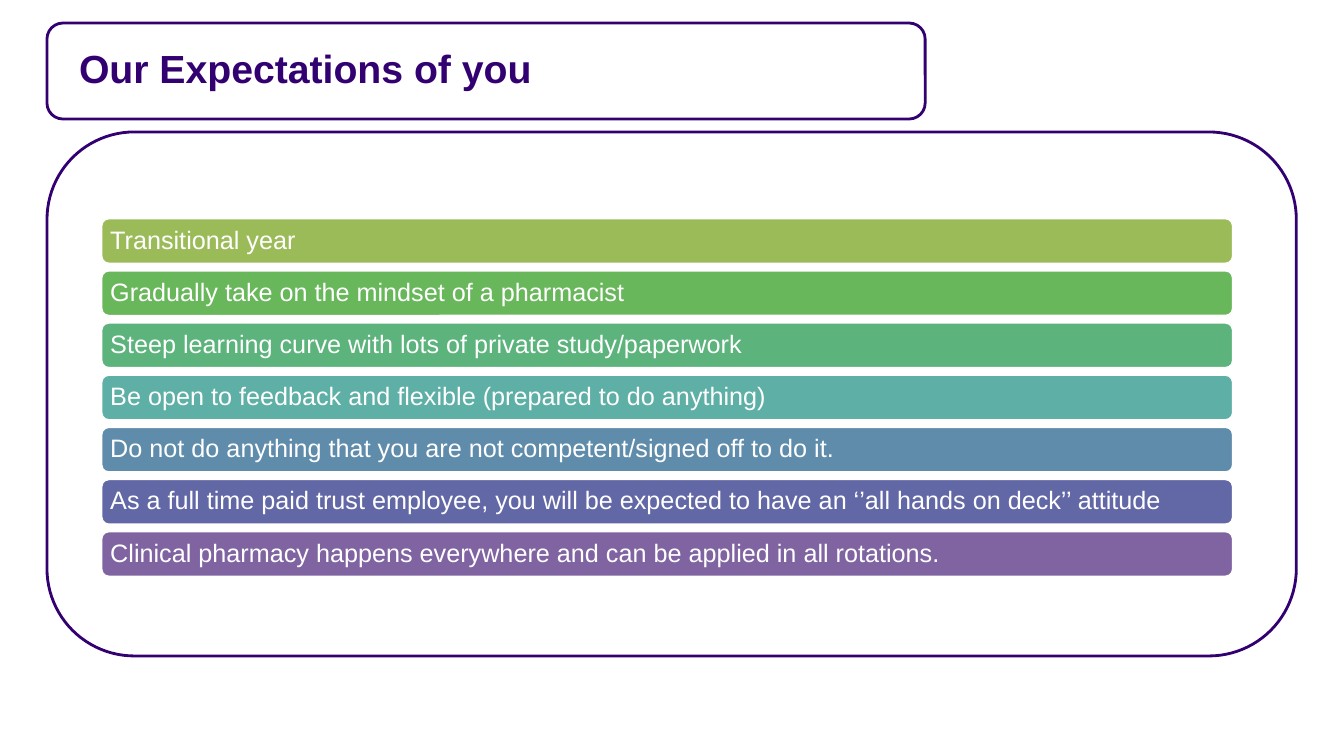
from lxml.etree import SubElement
from pptx import Presentation
from pptx.dml.color import RGBColor
from pptx.enum.shapes import MSO_SHAPE
from pptx.enum.text import MSO_ANCHOR, PP_ALIGN
from pptx.oxml.ns import qn
from pptx.util import Inches, Pt

# Content
PURPLE = RGBColor(0x33, 0x00, 0x72)
WHITE = RGBColor(0xFF, 0xFF, 0xFF)
TITLE = "Our Expectations of you"
EXPECTATIONS = [
    ("Transitional year", RGBColor(0x9B, 0xBB, 0x59)),
    ("Gradually take on the mindset of a pharmacist", RGBColor(0x69, 0xB7, 0x5B)),
    ("Steep learning curve with lots of private study/paperwork", RGBColor(0x5C, 0xB3, 0x7C)),
    ("Be open to feedback and flexible (prepared to do anything)", RGBColor(0x5E, 0xAF, 0xA6)),
    ("Do not do anything that you are not competent/signed off to do it.",
     RGBColor(0x60, 0x8C, 0xAB)),
    ("As a full time paid trust employee, you will be expected to have an "
     "‘’all hands on deck’’ attitude", RGBColor(0x62, 0x67, 0xA6)),
    ("Clinical pharmacy happens everywhere and can be applied in all rotations.",
     RGBColor(0x80, 0x64, 0xA2)),
]

# Layout in px: left, top, width, height
PX_PER_INCH = 100.8
PANEL = (47, 132, 1249, 524)
BANNER = (47, 23, 878, 96)
TITLE_BOX = (69, 38, 836, 60)
BAR_LIST = (101, 218, 1132, 359)
BAR_HEIGHT = 46

TITLE_FONT = {"name": "Arial", "size": Pt(28), "bold": True}
BAR_FONT = {"name": "Arial", "size": Pt(18), "bold": False}


def px(length):
    return Inches(length / PX_PER_INCH)


def add_round_box(slide, box, fill, line):
    shape = slide.shapes.add_shape(MSO_SHAPE.ROUNDED_RECTANGLE, *map(px, box))
    shape.shadow.inherit = False
    shape.fill.solid()
    shape.fill.fore_color.rgb = fill
    shape.line.color.rgb = line
    shape.line.width = Pt(2)
    return shape


def set_text(shape, text, font_values, color, inset_x, inset_y):
    frame = shape.text_frame
    frame_values = {
        "text": text, "word_wrap": True, "vertical_anchor": MSO_ANCHOR.MIDDLE,
        "margin_left": px(inset_x), "margin_right": px(inset_x),
        "margin_top": px(inset_y), "margin_bottom": px(inset_y),
    }
    for name, value in frame_values.items():
        setattr(frame, name, value)
    paragraph = frame.paragraphs[0]
    paragraph.alignment = PP_ALIGN.LEFT
    font = paragraph.runs[0].font
    for name, value in font_values.items():
        setattr(font, name, value)
    font.color.rgb = color
    return paragraph


def main():
    presentation = Presentation()
    presentation.slide_width = Inches(13.33)
    presentation.slide_height = Inches(7.5)
    slide = presentation.slides.add_slide(presentation.slide_layouts[5])

    # Outlined frames, 90% opaque
    for box in (PANEL, BANNER):
        frame = add_round_box(slide, box, WHITE, PURPLE)
        color = frame.fill._xPr.find(qn("a:solidFill"))[0]
        SubElement(color, qn("a:alpha"), val="90000")

    # Title, in front of its banner
    title = slide.shapes.title
    for name, length in zip(("left", "top", "width", "height"), TITLE_BOX):
        setattr(title, name, px(length))
    set_text(title, TITLE, TITLE_FONT, PURPLE, 10, 5)
    slide.shapes._spTree.append(title._element)

    # Expectation bars, evenly spread over the list area
    left, top, width, height = BAR_LIST
    pitch = (height - BAR_HEIGHT) / (len(EXPECTATIONS) - 1)
    for index, (text, color) in enumerate(EXPECTATIONS):
        box = (left, top + index * pitch, width, BAR_HEIGHT)
        bar = add_round_box(slide, box, color, WHITE)
        paragraph = set_text(bar, text, BAR_FONT, WHITE, 7, 7)
        paragraph.line_spacing = 0.9

    presentation.save("out.pptx")


if __name__ == "__main__":
    main()
